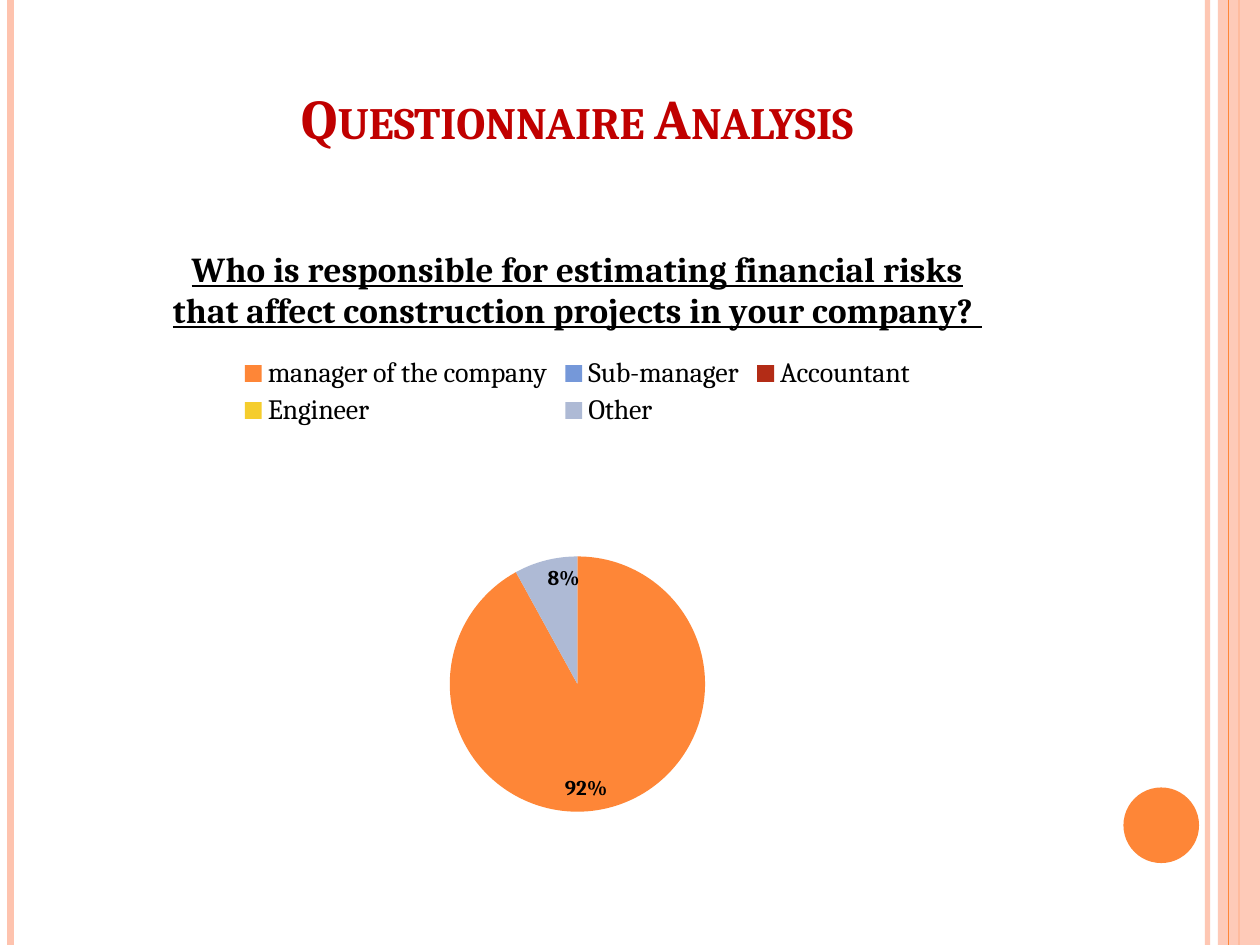
"""Build the questionnaire analysis slide with its pie chart of responses."""
from lxml import etree
from pptx import Presentation, util as u
from pptx.chart import data
from pptx.dml import color
from pptx.enum import chart as charts, shapes, text
from pptx.oxml import ns

FONT = "Cambria"
WIDTH, HEIGHT = 720, 540
TITLE = "Questionnaire Analysis"
QUESTION = ("Who is responsible for estimating financial risks "
            "that affect construction projects in your company? ")
ANSWERS = [
    ("manager of the company", 92, "FE8637"),
    ("Sub-manager", 0, "7598D9"),
    ("Accountant", 0, "B32C16"),
    ("Engineer", 0, "F5CD2D"),
    ("Other", 8, "AEBAD5"),
]
STRIPES = [(690, "FEC3AE", 3, 93), (6, "FEC3AE", 4.5, 100), (708, "FE8637", 1.5, 100)]
INNER_STRIPE = (702, "FE8637", 0.75, 100)
BAND = (shapes.MSO_SHAPE.RECTANGLE, (696, 0, 24, HEIGHT), "FEC3AE", 87)
DISC = (shapes.MSO_SHAPE.OVAL, (642, 450, 43.2, 43.2), "FE8637", 100)
TITLE_AREA = (36, 0, 588, 90)
CHART_AREA = (36, 126, 588, 384)
PLOT_LAYOUT = {"layoutTarget": "inner", "xMode": "edge", "yMode": "edge",
               "x": 0, "y": 0.5, "w": 1, "h": 0.38}


def rgb(value):
    return color.RGBColor.from_string(value)


def points(values):
    return [u.Pt(value) for value in values]


def style(font, tint="000000", **values):
    for name, value in {"name": FONT, **values}.items():
        setattr(font, name, value)
    font.color.rgb = rgb(tint)


def set_opacity(shape, percent):
    if percent < 100:
        tint = next(shape.element.spPr.iter(ns.qn("a:srgbClr")))
        etree.SubElement(tint, ns.qn("a:alpha")).set("val", str(percent * 1000))


def add_stripe(page, x, tint, weight, opacity):
    stripe = page.shapes.add_connector(
        shapes.MSO_CONNECTOR.STRAIGHT, *points((x, 0, x, HEIGHT)))
    stripe.line.color.rgb = rgb(tint)
    stripe.line.width = u.Pt(weight)
    set_opacity(stripe, opacity)
    etree.SubElement(stripe.element.spPr, ns.qn("a:effectLst"))


def add_solid(page, kind, area, tint, opacity):
    solid = page.shapes.add_shape(kind, *points(area))
    solid.shadow.inherit = False
    solid.fill.solid()
    solid.fill.fore_color.rgb = rgb(tint)
    solid.line.fill.background()
    set_opacity(solid, opacity)


def add_title(page):
    title = page.shapes.title
    title.left, title.top, title.width, title.height = points(TITLE_AREA)
    title.text_frame.vertical_anchor = text.MSO_ANCHOR.BOTTOM
    para = title.text_frame.paragraphs[0]
    para.alignment = text.PP_ALIGN.CENTER
    span = para.add_run()
    span.text = TITLE
    style(span.font, "C00000", size=u.Pt(32), bold=True)
    span.font._element.set("cap", "small")


def place_plot(chart):
    area = chart.element.find(".//" + ns.qn("c:plotArea"))
    for old in area.findall(ns.qn("c:layout")):
        area.remove(old)
    layout = etree.Element(ns.qn("c:layout"))
    manual = etree.SubElement(layout, ns.qn("c:manualLayout"))
    for name, value in PLOT_LAYOUT.items():
        etree.SubElement(manual, ns.qn("c:" + name)).set("val", str(value))
    area.insert(0, layout)


def hide_label(labels, index):
    label = etree.Element(ns.qn("c:dLbl"))
    for name, value in (("idx", index), ("delete", 1)):
        etree.SubElement(label, ns.qn("c:" + name)).set("val", str(value))
    labels.insert(index - 1, label)


def add_pie(page):
    names, values, tints = zip(*ANSWERS)
    content = data.CategoryChartData()
    content.categories = names
    content.add_series("Series 1", values)
    chart = page.shapes.add_chart(
        charts.XL_CHART_TYPE.PIE, *points(CHART_AREA), content).chart
    style(chart.font, size=u.Pt(10))
    chart.has_title = True
    span = chart.chart_title.text_frame.paragraphs[0].add_run()
    span.text = QUESTION
    style(span.font, size=u.Pt(20), bold=True, underline=True)
    chart.has_legend = True
    chart.legend.position = charts.XL_LEGEND_POSITION.TOP
    chart.legend.include_in_layout = False
    style(chart.legend.font, size=u.Pt(16))
    plot = chart.plots[0]
    plot.vary_by_categories = True
    series = plot.series[0]
    labels = series.data_labels
    style(labels.font, size=u.Pt(12), bold=True)
    labels.show_percentage = True
    labels.show_value = False
    labels.number_format, labels.number_format_is_linked = "0%", False
    labels.position = charts.XL_LABEL_POSITION.INSIDE_END
    holder = series._element.find(ns.qn("c:dLbls"))
    for index, (value, tint) in enumerate(zip(values, tints)):
        fill = series.points[index].format.fill
        fill.solid()
        fill.fore_color.rgb = rgb(tint)
        if value == 0:
            hide_label(holder, index)
    place_plot(chart)


def main():
    deck = Presentation()
    deck.slide_width, deck.slide_height = points((WIDTH, HEIGHT))
    page = deck.slides.add_slide(deck.slide_layouts[5])
    for stripe in STRIPES:
        add_stripe(page, *stripe)
    add_solid(page, *BAND)
    add_stripe(page, *INNER_STRIPE)
    add_solid(page, *DISC)
    add_title(page)
    add_pie(page)
    deck.save("out.pptx")


if __name__ == "__main__":
    main()
